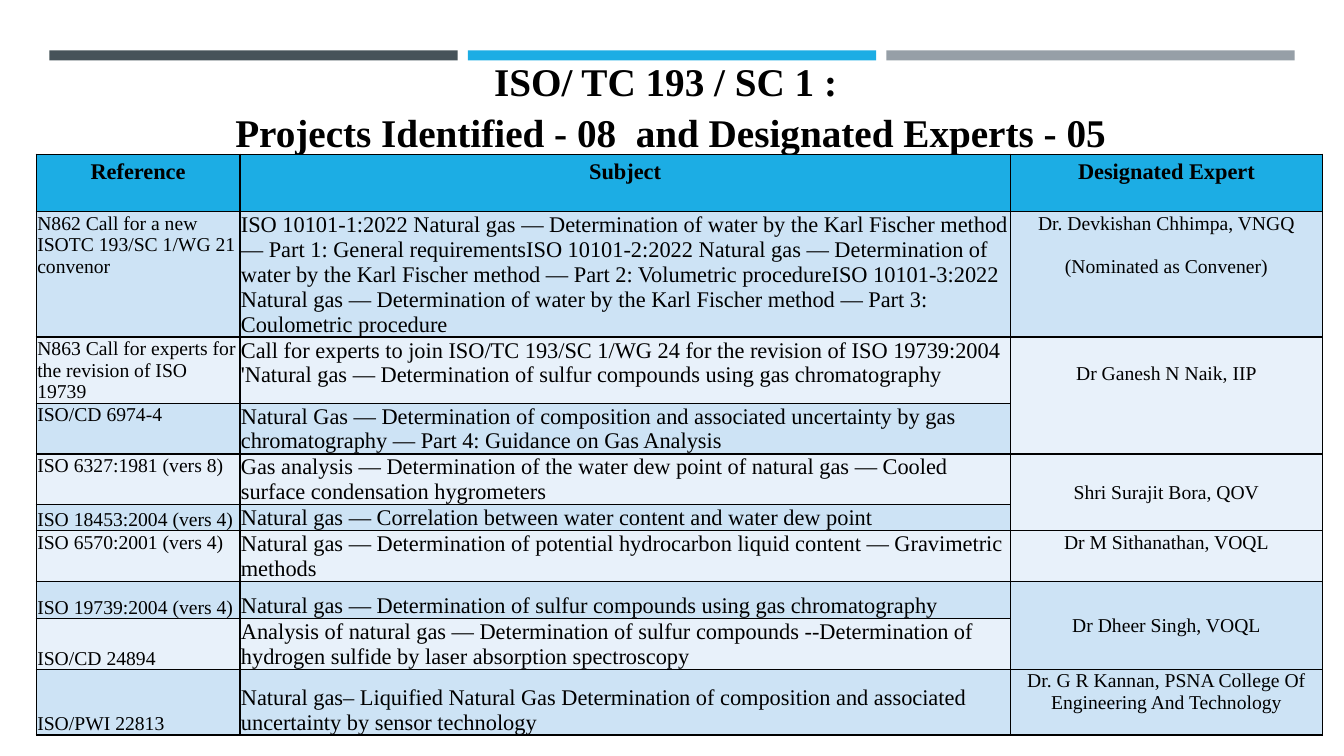
"""Build the ISO/TC 193/SC 1 slide of projects and designated experts."""
from lxml.etree import SubElement
from pptx import Presentation
from pptx.dml.color import RGBColor
from pptx.enum.shapes import MSO_SHAPE
from pptx.enum.text import MSO_ANCHOR, PP_ALIGN
from pptx.oxml import parse_xml
from pptx.oxml.ns import nsdecls, qn
from pptx.util import Inches, Pt

COLORS = {"slate": "465359", "blue": "1CADE4", "grey": "969FA7",
          "dark_band": "CDE3F5", "light_band": "E8F1FA", "black": "000000"}
FONT = "Times New Roman"
TOP, MIDDLE, BOTTOM = MSO_ANCHOR.TOP, MSO_ANCHOR.MIDDLE, MSO_ANCHOR.BOTTOM


def add_text(p, text, size, bold=False, align=PP_ALIGN.LEFT):
    p.alignment = align
    r = p.add_run()
    r.text = text
    r.font.name = FONT
    r.font.size = Pt(size)
    r.font.bold = bold
    r.font.color.rgb = RGBColor.from_string(COLORS["black"])


def style_cell(cell, color):
    cell.fill.solid()
    cell.fill.fore_color.rgb = RGBColor.from_string(COLORS[color])
    tc_pr = cell._tc.get_or_add_tcPr()
    for i, side in enumerate(("lnL", "lnR", "lnT", "lnB")):
        ln = parse_xml(f'<a:{side} {nsdecls("a")} w="12700"><a:solidFill>'
                       f'<a:srgbClr val="{COLORS["black"]}"/></a:solidFill></a:{side}>')
        tc_pr.insert(i, ln)


prs = Presentation()
prs.slide_width = Inches(13.33)
prs.slide_height = Inches(7.5)
s = prs.slides.add_slide(prs.slide_layouts[5])

for i, color in enumerate(("slate", "blue", "grey")):
    bar = s.shapes.add_shape(MSO_SHAPE.RECTANGLE, Inches(0.49 + 4.15 * i), Inches(0.5),
                             Inches(4.05), Inches(0.1))
    bar.shadow.inherit = False
    bar.fill.solid()
    bar.fill.fore_color.rgb = RGBColor.from_string(COLORS[color])
    bar.line.fill.background()

rows = [
    ("N862 Call for a new ISOTC 193/SC 1/WG 21 convenor",
     "ISO 10101-1:2022 Natural gas — Determination of water by the Karl Fischer method "
     "— Part 1: General requirementsISO 10101-2:2022 Natural gas — Determination of "
     "water by the Karl Fischer method — Part 2: Volumetric procedureISO 10101-3:2022 "
     "Natural gas — Determination of water by the Karl Fischer method — Part 3: "
     "Coulometric procedure", TOP, 1.24),
    ("N863 Call for experts for the revision of ISO 19739",
     "Call for experts to join ISO/TC 193/SC 1/WG 24 for the revision of ISO 19739:2004 "
     "'Natural gas — Determination of sulfur compounds using gas chromatography", TOP, 0.65),
    ("ISO/CD 6974-4",
     "Natural Gas — Determination of composition and associated uncertainty by gas "
     "chromatography — Part 4: Guidance on Gas Analysis", TOP, 0.5),
    ("ISO 6327:1981 (vers 8)",
     "Gas analysis — Determination of the water dew point of natural gas — Cooled "
     "surface condensation hygrometers", TOP, 0.5),
    ("ISO 18453:2004 (vers 4)",
     "Natural gas — Correlation between water content and water dew point", BOTTOM, 0.25),
    ("ISO 6570:2001 (vers 4)",
     "Natural gas — Determination of potential hydrocarbon liquid content — Gravimetric "
     "methods", TOP, 0.5),
    ("ISO 19739:2004 (vers 4)",
     "Natural gas — Determination of sulfur compounds using gas chromatography", BOTTOM, 0.37),
    ("ISO/CD 24894",
     "Analysis of natural gas — Determination of sulfur compounds --Determination of "
     "hydrogen sulfide by laser absorption spectroscopy", BOTTOM, 0.5),
    ("ISO/PWI 22813",
     "Natural gas– Liquified Natural Gas Determination of composition and associated "
     "uncertainty by sensor technology", BOTTOM, 0.65),
]
experts = [
    (1, 1, ["Dr. Devkishan Chhimpa, VNGQ", "(Nominated as Convener)"], TOP, 0),
    (2, 3, ["Dr Ganesh N Naik, IIP"], MIDDLE, 0.43),
    (4, 5, ["Shri Surajit Bora, QOV"], MIDDLE, 0),
    (6, 6, ["Dr M Sithanathan, VOQL"], TOP, 0),
    (7, 8, ["Dr Dheer Singh, VOQL"], MIDDLE, 0),
    (9, 9, ["Dr. G R Kannan, PSNA College Of Engineering And Technology"], TOP, 0),
]

table = s.shapes.add_table(len(rows) + 1, 3, Inches(0.36), Inches(1.53),
                           Inches(12.76), Inches(5.73)).table
for column, width in zip(table.columns, (2.02, 7.64, 3.1)):
    column.width = Inches(width)
table.rows[0].height = Inches(0.57)
for cell, heading in zip(table.rows[0].cells, ("Reference", "Subject", "Designated Expert")):
    style_cell(cell, "blue")
    add_text(cell.text_frame.paragraphs[0], heading, 16, True, PP_ALIGN.CENTER)

for i, (reference, subject, anchor, height) in enumerate(rows, 1):
    table.rows[i].height = Inches(height)
    for cell in table.rows[i].cells:
        style_cell(cell, "dark_band" if i % 2 else "light_band")
        cell.margin_left = cell.margin_right = cell.margin_top = Inches(0.01)
        cell.margin_bottom = 0
        cell.vertical_anchor = anchor
    add_text(table.cell(i, 0).text_frame.paragraphs[0], reference, 14)
    add_text(table.cell(i, 1).text_frame.paragraphs[0], subject, 16)

for first, last, lines, anchor, bottom in experts:
    cell = table.cell(first, 2)
    if last > first:
        cell.merge(table.cell(last, 2))
    cell.vertical_anchor = anchor
    cell.margin_bottom = Inches(bottom)
    tf = cell.text_frame
    for i, line in enumerate(lines):
        p = tf.add_paragraph() if i else tf.paragraphs[0]
        if i:
            p.space_before = Pt(15.5)
        add_text(p, line, 14, align=PP_ALIGN.CENTER)
    for row in range(first + 1, last + 1):
        end = table.cell(row, 2).text_frame.paragraphs[0]._p
        SubElement(end, qn("a:endParaRPr"), sz="1400")

title = s.shapes.title
title.left, title.top = Inches(0.36), Inches(0.52)
title.width, title.height = Inches(12.58), Inches(1.04)
tf = title.text_frame
tf.word_wrap = True
tf.vertical_anchor = MIDDLE
for i, line in enumerate(("ISO/ TC 193 / SC 1 : ",
                          "Projects Identified - 08  and Designated Experts - 05")):
    p = tf.add_paragraph() if i else tf.paragraphs[0]
    p.line_spacing = 1.08
    add_text(p, line, 28, True, PP_ALIGN.CENTER)

prs.save("out.pptx")
